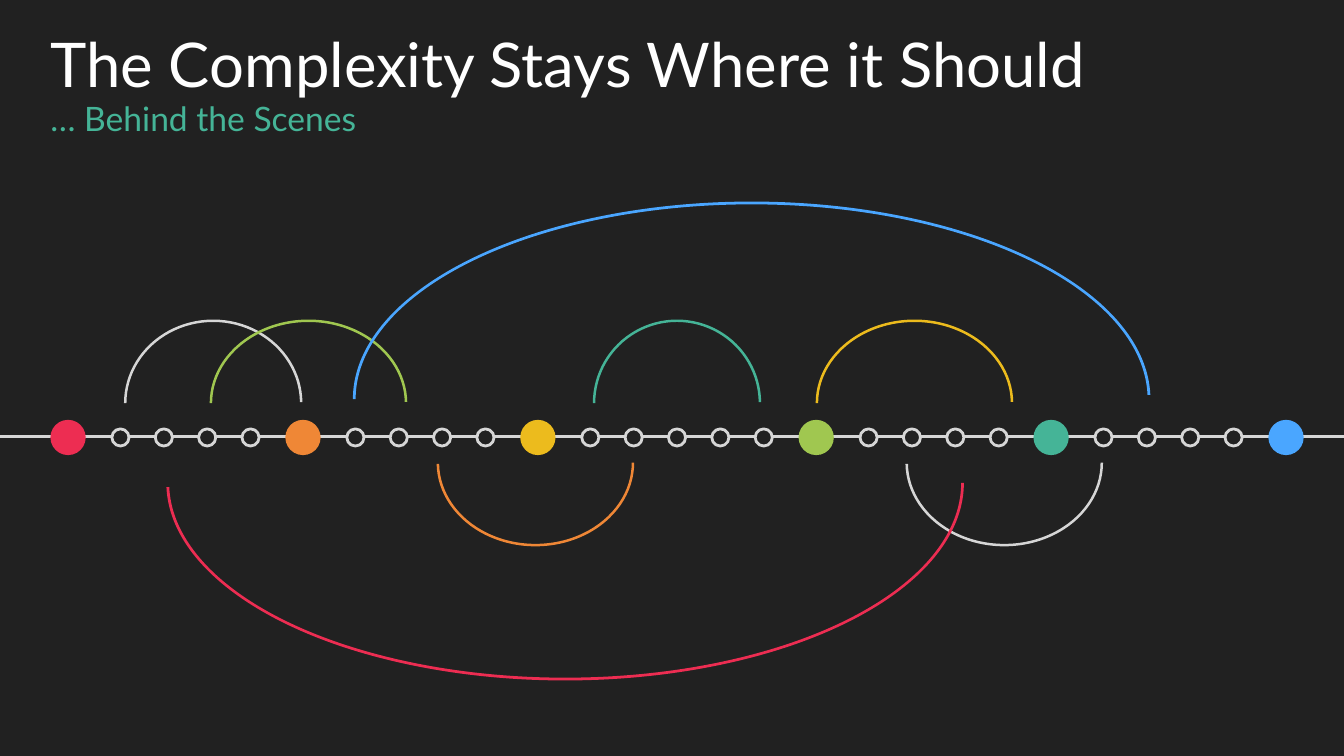
from pptx import Presentation
from pptx.dml.color import RGBColor
from pptx.enum.shapes import MSO_CONNECTOR, MSO_SHAPE
from pptx.oxml.ns import qn
from pptx.util import Inches, Pt

WIDTH, HEIGHT = 13.33, 7.5
BACKGROUND, WHITE, GREY = "212121", "FFFFFF", "D6D6D6"
RED, ORANGE, YELLOW = "ED2D52", "EF8736", "ECBB1D"
GREEN, TEAL, BLUE = "A0C750", "45B497", "4AA6FF"

# text, left, top, width, height, size, colour, space before
HEADINGS = [
    ("The Complexity Stays Where it Should", 0.5, 0.34, 11.39, 0.76, 44, WHITE, 0),
    ("… Behind the Scenes", 0.5, 1.02, 9.55, 0.64, 24, TEAL, 10),
]

# milestone colour, number of small steps that follow it
MILESTONES = [(RED, 4), (ORANGE, 4), (YELLOW, 5), (GREEN, 4), (TEAL, 4), (BLUE, 0)]
START, AXIS = 0.5, 4.33
MILESTONE_SIZE, STEP_SIZE = 0.35, 0.17
FIRST_STEP, STEP_PITCH = 0.61, 0.43

# left, width, colour, above the axis
SMALL_ARCS = [
    (1.23, 1.77, GREY, True),
    (2.08, 1.96, GREEN, True),
    (4.33, 1.96, ORANGE, False),
    (5.88, 1.67, TEAL, True),
    (8.09, 1.96, YELLOW, True),
    (8.98, 1.96, GREY, False),
]
LARGE_ARCS = [(1.65, 7.91, RED, False), (3.5, 7.91, BLUE, True)]
# arcs, height, top when above, top when below, end angle, thickness
ARC_GROUPS = [
    (SMALL_ARCS, 1.66, 3.17, 3.76, 215.581, 0.015),
    (LARGE_ARCS, 3.92, 2.0, 2.83, 215.625, 0.007),
]


def paint(fill, colour):
    fill.solid()
    fill.fore_color.rgb = RGBColor.from_string(colour)


def add_heading(slide, text, left, top, width, height, size, colour, space_before):
    box = slide.shapes.add_textbox(*map(Inches, (left, top, width, height)))
    frame = box.text_frame
    frame.word_wrap = True
    frame.margin_left = frame.margin_right = 0
    frame.margin_top = frame.margin_bottom = 0
    paragraph = frame.paragraphs[0]
    paragraph.line_spacing = 0.9
    paragraph.space_before = Pt(space_before)
    run = paragraph.add_run()
    run.text = text
    run.font.name = "Lato"
    run.font.size = Pt(size)
    paint(run.font.fill, colour)


def add_figure(slide, kind, left, top, width, height, colour, outline=None):
    shape = slide.shapes.add_shape(kind, *map(Inches, (left, top, width, height)))
    shape.shadow.inherit = False
    paint(shape.fill, colour)
    if outline:
        paint(shape.line.fill, outline)
        shape.line.width = Pt(2)
    else:
        shape.line.fill.background()
    return shape


def add_dot(slide, left, size, colour, outline=None):
    """Add a circle centred vertically on the axis."""
    add_figure(slide, MSO_SHAPE.OVAL, left, AXIS + 0.01 - size / 2, size, size,
               colour, outline)


def add_axis(slide):
    axis = slide.shapes.add_connector(
        MSO_CONNECTOR.STRAIGHT, 0, Inches(AXIS), Inches(WIDTH), Inches(AXIS))
    paint(axis.line.fill, GREY)
    axis.line.width = Pt(2)
    properties = axis._element.spPr
    properties.append(properties.makeelement(qn("a:effectLst"), {}))


def add_timeline(slide):
    left = START
    for colour, steps in MILESTONES:
        add_dot(slide, left, MILESTONE_SIZE, colour)
        left += FIRST_STEP
        for _ in range(steps):
            add_dot(slide, left, STEP_SIZE, BACKGROUND, GREY)
            left += STEP_PITCH


def add_arcs(slide):
    for arcs, height, top_above, top_below, end_angle, thickness in ARC_GROUPS:
        for left, width, colour, above in arcs:
            top = top_above if above else top_below
            arc = add_figure(slide, MSO_SHAPE.BLOCK_ARC, left, top, width, height, colour)
            for index, value in enumerate((108, end_angle, thickness)):
                arc.adjustments[index] = value
            arc.rotation = 0 if above else 180


def main():
    presentation = Presentation()
    presentation.slide_width = Inches(WIDTH)
    presentation.slide_height = Inches(HEIGHT)
    slide = presentation.slides.add_slide(presentation.slide_layouts[6])
    paint(slide.background.fill, BACKGROUND)
    for heading in HEADINGS:
        add_heading(slide, *heading)
    add_axis(slide)
    add_timeline(slide)
    add_arcs(slide)
    presentation.save("out.pptx")


if __name__ == "__main__":
    main()
